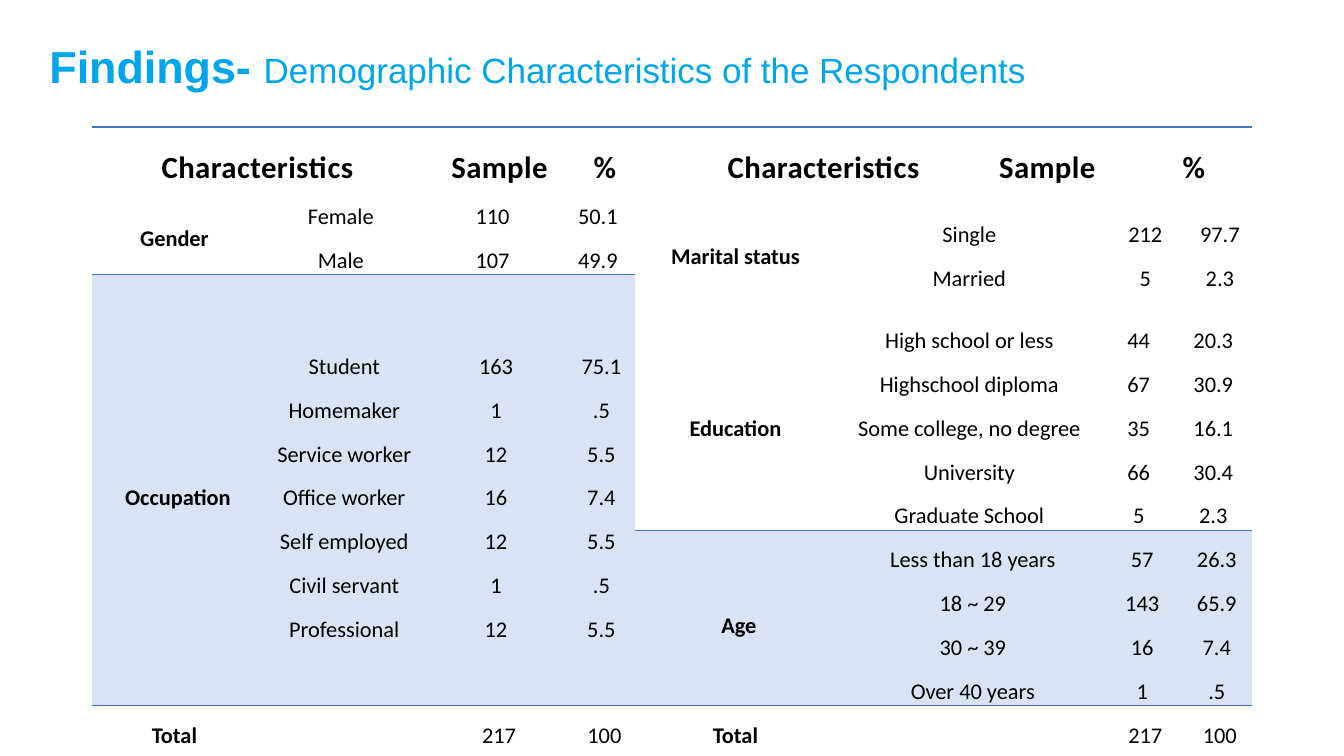
from dataclasses import dataclass

from lxml import etree
from pptx import Presentation
from pptx import util as u
from pptx.dml.color import RGBColor
from pptx.enum import text
from pptx.oxml.ns import qn
from pptx.table import Table

PX = 9144  # EMU per px, 100 px to the inch
BLUE, RULE, SHADE, BLACK = "00A6EB", "4472C4", "DAE3F3", "000000"
NO_STYLE = "{2D5ABB26-0587-4C30-8999-92F81FD0307C}"
CENTER, JUSTIFY = text.PP_ALIGN.CENTER, text.PP_ALIGN.JUSTIFY

COLUMN_WIDTHS = [152, 178, 136, 73, 187, 160, 117, 44, 28, 76]
ROW_HEIGHTS = [55, 86, 36, 216, 173, 43]

# First column and column span of label, name, sample and percent
LEFT = [(0, 1), (1, 1), (2, 1), (3, 1)]
RIGHT = [(4, 1), (5, 2), (7, 2), (9, 1)]


@dataclass
class Heading:
    label: str
    column: int
    span: int
    indent: int = 14
    margin: int = 0
    align: text.PP_ALIGN = CENTER


@dataclass
class Block:
    label: str
    columns: list[tuple[int, int]]
    row: int
    items: list[tuple[str, str, str]]
    row_span: int = 1
    shaded: bool = False
    edge: str = ""
    number_indent: int = 1


@dataclass
class CellStyle:
    size: int = 16
    bold: bool = False
    align: text.PP_ALIGN = CENTER
    indent: int = 14
    margin: int = 0
    inset_left: int = 0
    inset_right: int = 2
    spacing: int = 0
    shaded: bool = False
    edge: str = ""
    edge_width: float = 0.75


HEADINGS = [
    Heading("Characteristics", 0, 2, indent=-67, margin=67),
    Heading("Sample", 2, 1),
    Heading("%", 3, 1),
    Heading("Characteristics", 4, 2, indent=28),
    Heading("Sample", 6, 2, align=JUSTIFY),
    Heading("%", 8, 2, indent=35, align=JUSTIFY),
]

TOTAL = [("", "217", "100")]
BLOCKS = [
    Block("Gender", LEFT, 1, [("Female", "110", "50.1"), ("Male", "107", "49.9")], edge="lnB"),
    Block("Occupation", LEFT, 2, [
        ("Student", "163", "75.1"),
        ("Homemaker", "1", ".5"),
        ("Service worker", "12", "5.5"),
        ("Office worker", "16", "7.4"),
        ("Self employed", "12", "5.5"),
        ("Civil servant", "1", ".5"),
        ("Professional", "12", "5.5"),
    ], row_span=3, shaded=True, edge="lnT"),
    Block("Total", LEFT, 5, TOTAL, number_indent=14),
    Block("Marital status", RIGHT, 1, [("Single", "212", "97.7"), ("Married", "5", "2.3")],
          row_span=2, number_indent=14),
    Block("Education", RIGHT, 3, [
        ("High school or less", "44", "20.3"),
        ("Highschool diploma", "67", "30.9"),
        ("Some college, no degree", "35", "16.1"),
        ("University", "66", "30.4"),
        ("Graduate School", "5", "2.3"),
    ], edge="lnB"),
    Block("Age", RIGHT, 4, [
        ("Less than 18 years", "57", "26.3"),
        ("18 ~ 29", "143", "65.9"),
        ("30 ~ 39", "16", "7.4"),
        ("Over 40 years", "1", ".5"),
    ], shaded=True, edge="lnT"),
    Block("Total", RIGHT, 5, TOTAL, number_indent=14),
]


def px(length: int) -> u.Emu:
    return u.Emu(length * PX)


def color(value: str) -> RGBColor:
    return RGBColor.from_string(value)


def add_edge(cell, edge: str, width: float) -> None:
    line = etree.Element(qn("a:" + edge), w=str(u.Pt(width)))
    fill = etree.SubElement(line, qn("a:solidFill"))
    etree.SubElement(fill, qn("a:srgbClr"), val=RULE)
    cell._tc.get_or_add_tcPr().insert(0, line)


def format_cell(cell, style: CellStyle) -> None:
    cell.margin_left, cell.margin_right = px(style.inset_left), px(style.inset_right)
    cell.margin_top = cell.margin_bottom = 0
    cell.vertical_anchor = text.MSO_ANCHOR.MIDDLE
    if style.shaded:
        cell.fill.solid()
        cell.fill.fore_color.rgb = color(SHADE)
    else:
        cell.fill.background()
    if style.edge:
        add_edge(cell, style.edge, style.edge_width)
    for paragraph in cell.text_frame.paragraphs:
        properties = paragraph._p.get_or_add_pPr()
        properties.set("marL", str(px(style.margin)))
        properties.set("indent", str(px(style.indent)))
        paragraph.alignment = style.align
        paragraph.line_spacing = 1.6
        font = paragraph.font
        font.name, font.size, font.bold = "Calibri", u.Pt(style.size), style.bold
        font.color.rgb = color(BLACK)
        if style.spacing:
            font._rPr.set("spc", str(style.spacing))


def fill_area(table: Table, row: int, column: int, row_span: int, column_span: int,
              lines: list[str], style: CellStyle) -> None:
    first = table.cell(row, column)
    if row_span * column_span > 1:
        first.merge(table.cell(row + row_span - 1, column + column_span - 1))
    first.text = "\n".join(lines)
    for r in range(row, row + row_span):
        for c in range(column, column + column_span):
            format_cell(table.cell(r, c), style)


def draw_heading(table: Table, heading: Heading) -> None:
    style = CellStyle(size=22, bold=True, align=heading.align, indent=heading.indent,
                      margin=heading.margin, inset_right=1, spacing=30,
                      edge="lnT", edge_width=1.5)
    fill_area(table, 0, heading.column, 1, heading.span, [heading.label], style)


def draw_block(table: Table, block: Block) -> None:
    fields = [[block.label]] + [list(values) for values in zip(*block.items)]
    for index, ((column, span), lines) in enumerate(zip(block.columns, fields)):
        style = CellStyle(bold=index == 0, indent=block.number_indent if index > 1 else 14,
                          inset_left=7 if block.shaded else 0,
                          shaded=block.shaded, edge=block.edge)
        fill_area(table, block.row, column, block.row_span, span, lines, style)


def draw_title(title) -> None:
    title.left, title.top, title.width, title.height = px(39), px(22), px(1280), px(86)
    frame = title.text_frame
    frame.auto_size = text.MSO_AUTO_SIZE.NONE
    frame.vertical_anchor = text.MSO_ANCHOR.MIDDLE
    paragraph = frame.paragraphs[0]
    paragraph.alignment = text.PP_ALIGN.LEFT
    paragraph.line_spacing = 1.0
    paragraph.space_after = u.Pt(12)
    for words, size, bold in [("Findings- ", 32, True),
                              ("Demographic Characteristics of the Respondents", 25, False)]:
        run = paragraph.add_run()
        run.text = words
        run.font.name, run.font.size, run.font.bold = "Arial", u.Pt(size), bold
        run.font.color.rgb = color(BLUE)


def main() -> None:
    presentation = Presentation()
    presentation.slide_width, presentation.slide_height = px(1333), px(750)
    slide = presentation.slides.add_slide(presentation.slide_layouts[5])
    draw_title(slide.shapes.title)

    # Table grid
    table = slide.shapes.add_table(len(ROW_HEIGHTS), len(COLUMN_WIDTHS), px(91), px(126),
                                   px(sum(COLUMN_WIDTHS)), px(sum(ROW_HEIGHTS))).table
    table.first_row = table.horz_banding = False
    table._tbl.tblPr.find(qn("a:tableStyleId")).text = NO_STYLE
    for column, width in zip(table.columns, COLUMN_WIDTHS):
        column.width = px(width)
    for row, height in zip(table.rows, ROW_HEIGHTS):
        row.height = px(height)

    # Table content
    for heading in HEADINGS:
        draw_heading(table, heading)
    for block in BLOCKS:
        draw_block(table, block)
    presentation.save("out.pptx")


if __name__ == "__main__":
    main()
